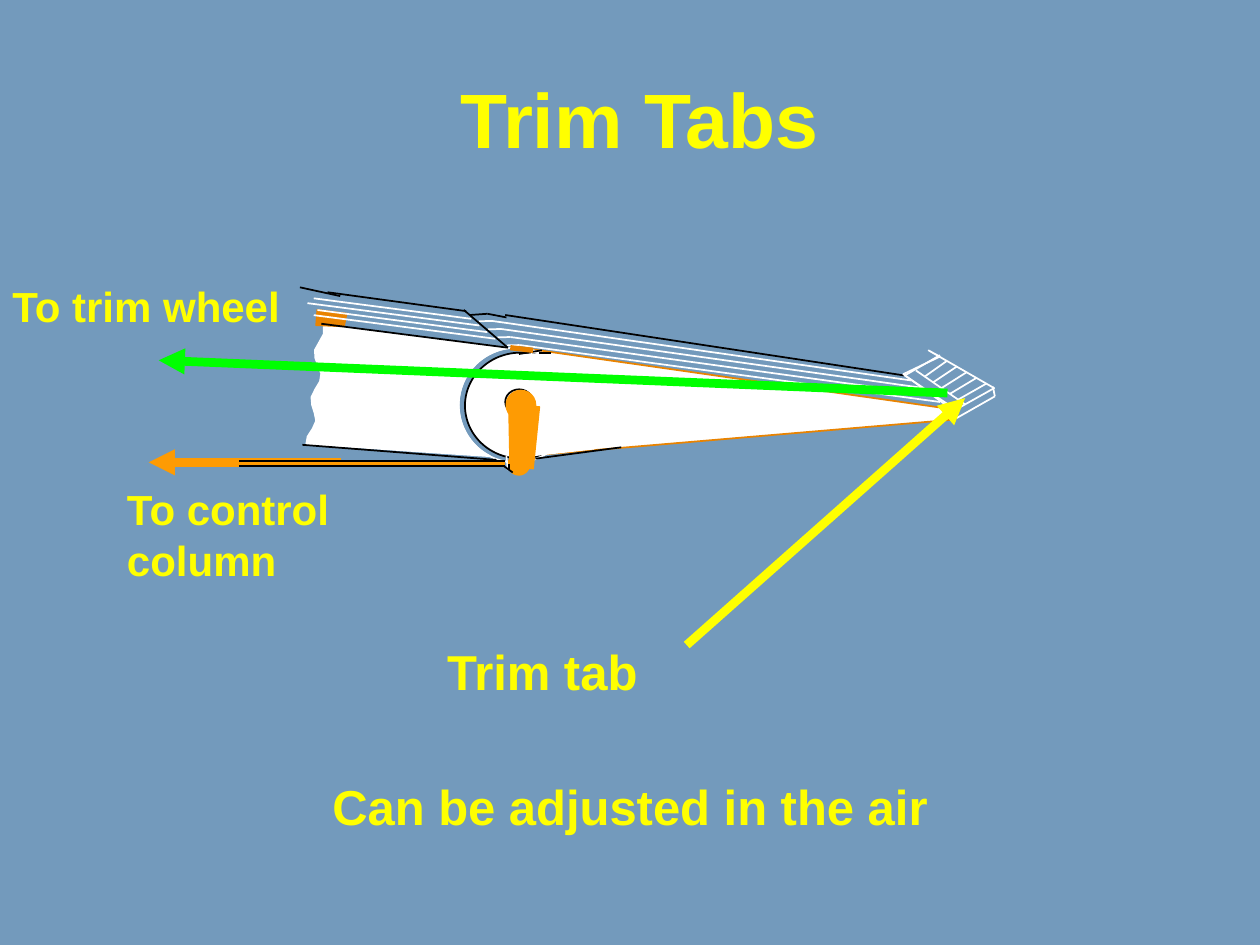
"""Build the Trim Tabs slide: a cutaway elevator with its control runs and labels."""
from dataclasses import dataclass
from itertools import pairwise
from math import cos, radians, sin
from typing import Optional

from lxml import etree
from pptx import Presentation
from pptx.dml.color import RGBColor
from pptx.enum.shapes import MSO_CONNECTOR, MSO_SHAPE
from pptx.enum.text import MSO_AUTO_SIZE, PP_ALIGN
from pptx.oxml.ns import qn
from pptx.util import Pt

STRAIGHT = MSO_CONNECTOR.STRAIGHT
OVAL = MSO_SHAPE.OVAL
GROW = MSO_AUTO_SIZE.SHAPE_TO_FIT_TEXT
LEFT, CENTER = PP_ALIGN.LEFT, PP_ALIGN.CENTER

SKY = RGBColor(0x73, 0x9A, 0xBC)
YELLOW = RGBColor(0xFF, 0xFF, 0x00)
WHITE = RGBColor(0xFF, 0xFF, 0xFF)
BLACK = RGBColor(0x00, 0x00, 0x00)
GREEN = RGBColor(0x00, 0xFF, 0x00)
RUST = RGBColor(0xE9, 0x83, 0x00)
ORANGE = RGBColor(0xFE, 0x9B, 0x03)

SLIDE_WIDTH, SLIDE_HEIGHT = 720, 540
STRINGER_COUNT = 4
RIB_COUNT = 5

GAP_CENTER, GAP_RADIUS = (294.9, 231.5), 32.8
HINGE_TOP = (290.2, 198.7)
HINGE_FAR_TOP = (265, 177.1)
TAB_FRONT = ((517, 214.6), (547.2, 234.7))
TAB_INNER = ((523.4, 211.7), (551.5, 231.1))
TAB_FAR = ((530.6, 200.2), (568.1, 221.8))
TRAILING_EDGE = (545, 234.7)

TORN_TOP, TORN_PITCH = 186.5, 4.5
TORN_LEFTS = (185, 185, 182.5, 180, 180.2, 181.8, 183.6, 182.9,
              180.2, 178, 178.4, 179.8, 180.7, 178.7, 175.8, 175)
STRINGER_LEFTS = (179.3, 175.7, 181.4, 179.3)
STRINGER_SLOPE = 0.13

ROD_LEFT, ROD_RIGHT, ROD_MIDDLE = 136.5, 288.7, 265
CRANK_FOOT = (296.5, 265.3)
CRANK_PIVOT = (297.7, 231.5)


@dataclass(frozen=True)
class Stroke:
    """A style of straight line."""
    color: RGBColor
    width: float = 1
    arrow: bool = False


@dataclass(frozen=True)
class Label:
    """A caption with its place and format."""
    text: str
    place: tuple
    size: float
    align: PP_ALIGN = LEFT
    wrap: bool = True
    lead: str = ""


WHITE_LINE, BLACK_LINE = Stroke(WHITE), Stroke(BLACK)
LABELS = (
    Label("Trim Tabs", (0, 37.4, SLIDE_WIDTH, 60.5), 44, CENTER, lead=" "),
    Label("To trim wheel", (0, 157, 277.9, 36.7), 24),
    Label("To control column", (65.5, 272.9, 161.3, 65.5), 24),
    Label("Trim tab", (248.4, 362.9, 124.6, 41), 28, wrap=False),
    Label("Can be adjusted in the air", (0, 439.9, SLIDE_WIDTH, 41), 28, CENTER),
)


def step(start: tuple, pitch: tuple, index: int) -> tuple:
    return start[0] + pitch[0] * index, start[1] + pitch[1] * index


def along(edge: tuple, share: float) -> tuple:
    (x1, y1), (x2, y2) = edge
    return x1 + (x2 - x1) * share, y1 + (y2 - y1) * share


def arc(center: tuple, radius: float, first: int, last: int, turn: int) -> list:
    angles = [radians(angle) for angle in range(first, last, turn)]
    return [(center[0] + radius * cos(a), center[1] + radius * sin(a)) for a in angles]


def paint(shape, line: RGBColor, fill: Optional[RGBColor]) -> None:
    shape.shadow.inherit = False
    if fill is None:
        shape.fill.background()
    else:
        shape.fill.solid()
        shape.fill.fore_color.rgb = fill
    shape.line.color.rgb = line
    shape.line.width = Pt(1)


def draw_panel(page, points, line: RGBColor, fill: Optional[RGBColor] = None) -> None:
    corners = [(Pt(x), Pt(y)) for x, y in points]
    builder = page.shapes.build_freeform(*corners[0])
    builder.add_line_segments(corners[1:], close=True)
    paint(builder.convert_to_shape(), line, fill)


def draw_oval(page, center: tuple, radii: tuple, line: RGBColor,
              fill: Optional[RGBColor] = None) -> None:
    (x, y), (across, down) = center, radii
    place = (x - across, y - down, 2 * across, 2 * down)
    paint(page.shapes.add_shape(OVAL, *map(Pt, place)), line, fill)


def draw_line(page, stroke: Stroke, *points: tuple) -> None:
    for start, end in pairwise(points):
        connector = page.shapes.add_connector(STRAIGHT, *map(Pt, start + end))
        connector.line.color.rgb = stroke.color
        connector.line.width = Pt(stroke.width)
        properties = connector._element.spPr
        if stroke.arrow:
            outline = properties.find(qn("a:ln"))
            etree.SubElement(outline, qn("a:tailEnd"), type="triangle")
        etree.SubElement(properties, qn("a:effectLst"))


def draw_elevator(page) -> None:
    skin = ((302.4, 199.4), (545, 234), (547.9, 234), (545, 239.8), (299.5, 260.6))
    root = ((298.1, 203), (301, 260.6), (339.8, 256.3), (338.4, 207.4), (303.8, 202.3))
    draw_panel(page, skin, RUST, WHITE)
    draw_oval(page, (297.4, 231.8), (31.7, 30.25), BLACK, WHITE)
    draw_oval(page, GAP_CENTER, (GAP_RADIUS, GAP_RADIUS), WHITE)
    draw_panel(page, root, WHITE, WHITE)
    draw_line(page, BLACK_LINE, (296.6, 202.3), (309.6, 200.2))
    draw_line(page, BLACK_LINE, (308.2, 201.6), (314.6, 201.6))
    draw_line(page, BLACK_LINE, (306, 262.1), (355, 255.6))
    draw_line(page, BLACK_LINE, TAB_FRONT[0], (288.7, 180))
    draw_line(page, BLACK_LINE, (289.4, 181.4), (278.6, 179.3), (268.6, 180))
    for index in range(STRINGER_COUNT):
        hinge_end = step((273.6, 183.6), (5.3, 4.6), index)
        knee = step(hinge_end, (7.5, -0.2), 1)
        tab_end = step((520.6, 217.4), (5.5, 4.1), index)
        draw_line(page, WHITE_LINE, hinge_end, knee, tab_end)


def draw_tab(page) -> None:
    rear_notch, front_notch = (537.1, 203.8), (516.2, 213.8)
    draw_panel(page, (TRAILING_EDGE, TAB_FAR[1], TAB_FAR[0], rear_notch, front_notch), WHITE)
    draw_line(page, WHITE_LINE, *TAB_FRONT)
    draw_line(page, WHITE_LINE, *TAB_INNER)
    draw_line(page, WHITE_LINE, TAB_FRONT[0], (537.1, 203))
    draw_line(page, WHITE_LINE, (546.5, 239), (568.5, 226.5), (567.4, 221))
    for index in range(RIB_COUNT):
        inner_end = along(TAB_INNER, 0.18 + 0.17 * index)
        far_end = along(TAB_FAR, 0.28 + 0.15 * index)
        draw_line(page, WHITE_LINE, inner_end, far_end)


def draw_stabilizer(page) -> None:
    nose_edge = arc(GAP_CENTER, GAP_RADIUS, 262, 112, -5)
    draw_panel(page, nose_edge + [(182.2, 254.2), (188.6, 186.5)], WHITE, WHITE)
    torn_edge = [(left, TORN_TOP + TORN_PITCH * row) for row, left in enumerate(TORN_LEFTS)]
    draw_panel(page, [(187.9, 254.9), (189.4, 185.8)] + torn_edge, WHITE, WHITE)
    draw_panel(page, ((196.6, 186.5), (180.7, 185.8), (181.4, 177.1), (198, 179.3)), RUST, RUST)
    for index, left in enumerate(STRINGER_LEFTS):
        right, top = step((269.3, 182.2), (4.6, 3.8), index)
        draw_line(page, WHITE_LINE, (right, top), (left, top - STRINGER_SLOPE * (right - left)))
    draw_line(page, BLACK_LINE, (266.4, 177.8), (187.2, 167))
    draw_line(page, BLACK_LINE, (194.4, 169.2), (171.4, 164.2))
    draw_line(page, BLACK_LINE, HINGE_FAR_TOP, HINGE_TOP, (183.6, 185))
    draw_line(page, BLACK_LINE, (283.7, 262.8), (172.8, 254.2))
    draw_line(page, Stroke(RUST, 3), (291.6, 198.7), (304.6, 200.2))


def draw_control_run(page) -> None:
    crank = ((308.2, 232.6), (304.6, 267.8), (291.6, 265.7), (290.9, 231.8))
    draw_panel(page, crank, ORANGE, ORANGE)
    draw_oval(page, (296.6, 229.7), (7.9, 7.2), BLACK)
    draw_oval(page, CRANK_PIVOT, (8.3, 8.3), ORANGE, ORANGE)
    draw_oval(page, CRANK_FOOT, (6, 6), ORANGE, ORANGE)
    draw_line(page, Stroke(ORANGE, 5, True), (195.1, 264.2), (85, 264.2))
    draw_line(page, WHITE_LINE, (289.4, 260.6), (290.2, 268.6))
    draw_line(page, BLACK_LINE, (288, 266.4), (293, 270))
    for offset in (-1.5, 0.7, 1.4):
        height = ROD_MIDDLE + offset
        draw_line(page, BLACK_LINE, (ROD_RIGHT, height), (ROD_LEFT, height))
    draw_line(page, Stroke(ORANGE, 2), (ROD_RIGHT, ROD_MIDDLE), (ROD_LEFT, ROD_MIDDLE))
    draw_line(page, BLACK_LINE, (290.9, 268.6), (290.9, 265))


def add_text(page, text: str, *, place: tuple, size: float, align: PP_ALIGN,
             wrap: bool, lead: str) -> None:
    frame = page.shapes.add_textbox(*map(Pt, place)).text_frame
    frame.word_wrap = wrap
    frame.auto_size = GROW
    para = frame.paragraphs[0]
    para.alignment = align
    for words, font in ((lead, "Lato"), (text, "Arial")):
        if words:
            span = para.add_run()
            span.text = words
            span.font.name = font
            span.font.size = Pt(size)
            span.font.bold = True
            span.font.color.rgb = YELLOW


def main() -> None:
    deck = Presentation()
    deck.slide_width, deck.slide_height = Pt(SLIDE_WIDTH), Pt(SLIDE_HEIGHT)
    page = deck.slides.add_slide(deck.slide_layouts[6])
    page.background.fill.solid()
    page.background.fill.fore_color.rgb = SKY
    for draw_part in (draw_elevator, draw_tab, draw_stabilizer, draw_control_run):
        draw_part(page)
    draw_line(page, Stroke(YELLOW, 5, True), (392.4, 368.6), (551.5, 227.5))
    draw_line(page, Stroke(GREEN, 5, True), (541.4, 224.6), (90.7, 205.9))
    for label in LABELS:
        add_text(page, label.text, place=label.place, size=label.size,
                 align=label.align, wrap=label.wrap, lead=label.lead)
    deck.save("out.pptx")


if __name__ == "__main__":
    main()
